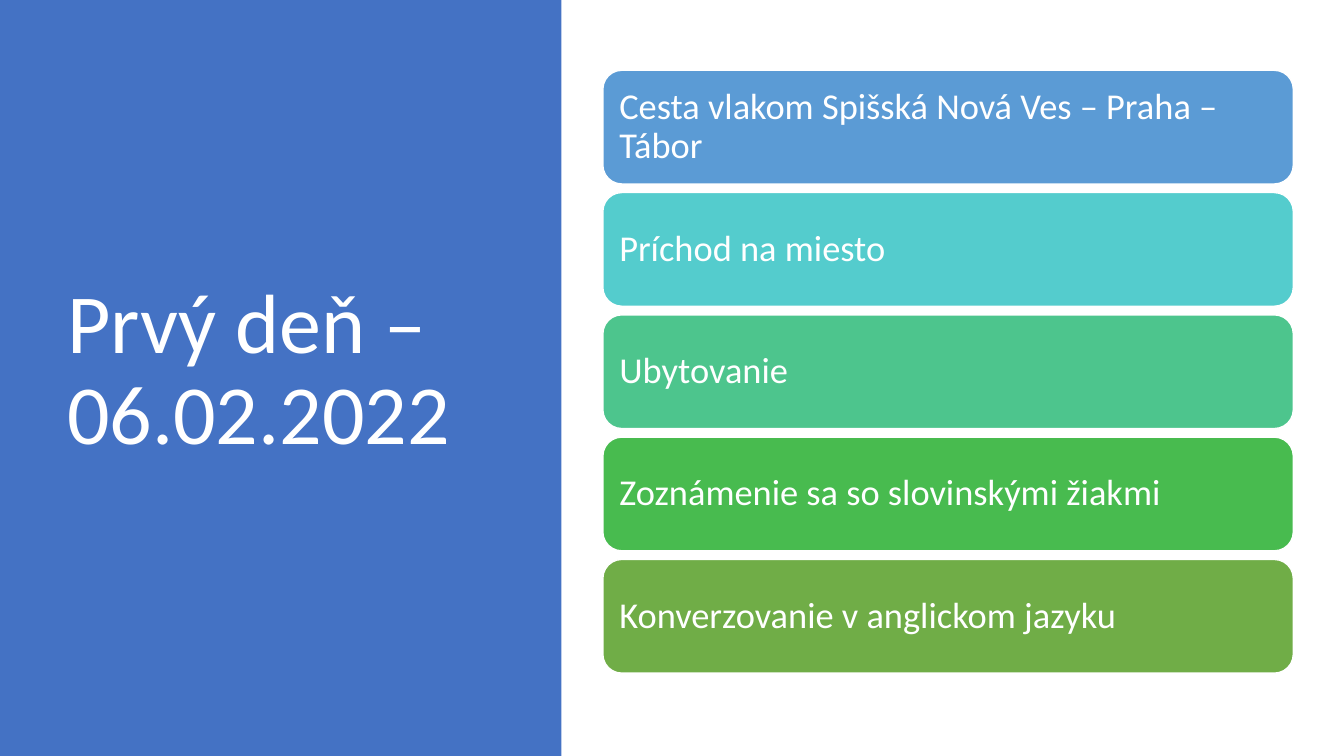
from pptx import Presentation
from pptx.dml.color import RGBColor
from pptx.enum import shapes, text
from pptx.util import Pt

FONT = "Calibri"
WHITE = "FFFFFF"
PANEL_COLOUR = "4472C4"
TITLE = "Prvý deň – 06.02.2022"
PROGRAMME = [
    ("Cesta vlakom Spišská Nová Ves – Praha – Tábor", "5B9BD5"),
    ("Príchod na miesto", "54CCCD"),
    ("Ubytovanie", "4DC58D"),
    ("Zoznámenie sa so slovinskými žiakmi", "48BB4F"),
    ("Konverzovanie v anglickom jazyku", "70AD47"),
]

SLIDE_WIDTH, SLIDE_HEIGHT = 960, 540
PANEL_WIDTH = 401
BAR_LEFT, BAR_TOP, BAR_WIDTH, BAR_HEIGHT = 430.6, 50.2, 493.2, 81.2
BAR_PITCH = 87.35


def colour(value):
    return RGBColor.from_string(value)


def add_filled_shape(slide, kind, box, fill):
    shape = slide.shapes.add_shape(kind, *map(Pt, box))
    shape.shadow.inherit = False
    shape.fill.solid()
    shape.fill.fore_color.rgb = colour(fill)
    shape.line.fill.background()
    return shape


def write(shape, words, size, side_margin, end_margin):
    """Fill a shape with white, left-aligned, vertically centred text."""
    frame = shape.text_frame
    frame.text = words
    frame.word_wrap = True
    frame.vertical_anchor = text.MSO_ANCHOR.MIDDLE
    frame.margin_left = frame.margin_right = Pt(side_margin)
    frame.margin_top = frame.margin_bottom = Pt(end_margin)
    paragraph = frame.paragraphs[0]
    paragraph.alignment = text.PP_ALIGN.LEFT
    paragraph.line_spacing = 0.9
    font = paragraph.runs[0].font
    font.name = FONT
    font.size = Pt(size)
    font.color.rgb = colour(WHITE)


presentation = Presentation()
presentation.slide_width = Pt(SLIDE_WIDTH)
presentation.slide_height = Pt(SLIDE_HEIGHT)
slide = presentation.slides.add_slide(presentation.slide_layouts[6])

add_filled_shape(slide, shapes.MSO_SHAPE.RECTANGLE,
                 (0, 0, PANEL_WIDTH, SLIDE_HEIGHT), PANEL_COLOUR)
title = slide.shapes.add_textbox(Pt(41), Pt(49), Pt(299.5), Pt(433.4))
write(title, TITLE, 60, 7.2, 3.6)

for index, (words, fill) in enumerate(PROGRAMME):
    top = BAR_TOP + index * BAR_PITCH
    bar = add_filled_shape(slide, shapes.MSO_SHAPE.ROUNDED_RECTANGLE,
                           (BAR_LEFT, top, BAR_WIDTH, BAR_HEIGHT), fill)
    bar.line.color.rgb = colour(WHITE)
    bar.line.width = Pt(1)
    write(bar, words, 26, 7.8, 7.8)

presentation.save("out.pptx")
